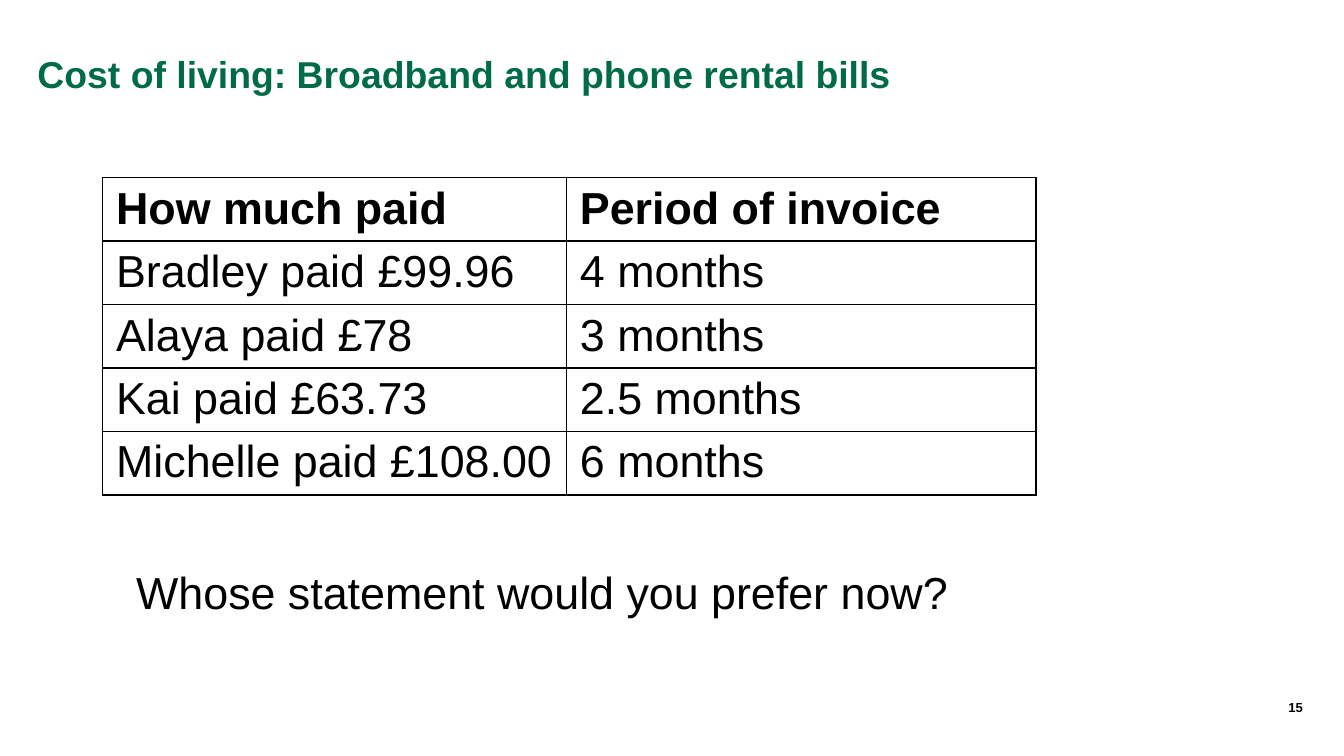
from dataclasses import dataclass

from lxml import etree
from pptx import Presentation
from pptx.dml.color import RGBColor
from pptx.enum import text
from pptx.oxml import ns
from pptx.util import Pt


@dataclass(frozen=True)
class Theme:
    font: str = "Arial"
    green: str = "006C47"
    black: str = "000000"
    title_size: float = 20
    text_size: float = 24
    number_size: float = 7
    border: float = 1


theme = Theme()


def write(frame, wording, size, color=theme.black, bold=False, align=text.PP_ALIGN.LEFT):
    frame.text = wording
    paragraph = frame.paragraphs[0]
    paragraph.alignment = align
    font = paragraph.runs[0].font
    font.name, font.size, font.bold = theme.font, Pt(size), bold
    font.color.rgb = RGBColor.from_string(color)


def clear_margins(frame):
    frame.margin_left = frame.margin_top = frame.margin_right = frame.margin_bottom = 0
    frame.word_wrap = True


deck = Presentation()
deck.slide_width, deck.slide_height = Pt(720), Pt(405)
slide = deck.slides.add_slide(deck.slide_layouts[5])

heading = slide.shapes.title
heading.left, heading.top, heading.width, heading.height = Pt(20), Pt(16.5), Pt(663), Pt(46)
clear_margins(heading.text_frame)
heading.text_frame.auto_size = text.MSO_AUTO_SIZE.NONE
heading.text_frame.vertical_anchor = text.MSO_ANCHOR.MIDDLE
write(heading.text_frame, "Cost of living: Broadband and phone rental bills",
      theme.title_size, theme.green, bold=True)

payments = [
    ("How much paid", "Period of invoice"),
    ("Bradley paid £99.96", "4 months"),
    ("Alaya paid £78", "3 months"),
    ("Kai paid £63.73", "2.5 months"),
    ("Michelle paid £108.00", "6 months"),
]
column_widths = [248.5, 251.5]
row_height = 34
bills = slide.shapes.add_table(
    len(payments), len(column_widths), Pt(55), Pt(95.2),
    Pt(sum(column_widths)), Pt(row_height * len(payments))).table
bills.horz_banding = False
for column, width in zip(bills.columns, column_widths):
    column.width = Pt(width)

for row_index, payment in enumerate(payments):
    bills.rows[row_index].height = Pt(row_height)
    for column_index, wording in enumerate(payment):
        cell = bills.cell(row_index, column_index)
        cell.margin_top = cell.margin_bottom = Pt(3.2)
        write(cell.text_frame, wording, theme.text_size, bold=row_index == 0)
        properties = cell._tc.get_or_add_tcPr()
        for side in ("a:lnL", "a:lnR", "a:lnT", "a:lnB"):
            border = etree.SubElement(properties, ns.qn(side), w=str(Pt(theme.border)))
            paint = etree.SubElement(border, ns.qn("a:solidFill"))
            etree.SubElement(paint, ns.qn("a:srgbClr"), val=theme.black)
        cell.fill.background()

question = slide.shapes.add_textbox(Pt(73), Pt(302.5), Pt(441), Pt(29)).text_frame
clear_margins(question)
question.auto_size = text.MSO_AUTO_SIZE.SHAPE_TO_FIT_TEXT
write(question, "Whose statement would you prefer now?", theme.text_size)

page_number = slide.shapes.add_textbox(Pt(626.5), Pt(375), Pt(71.5), Pt(21.5)).text_frame
clear_margins(page_number)
write(page_number, "15", theme.number_size, bold=True, align=text.PP_ALIGN.RIGHT)

deck.save("out.pptx")
